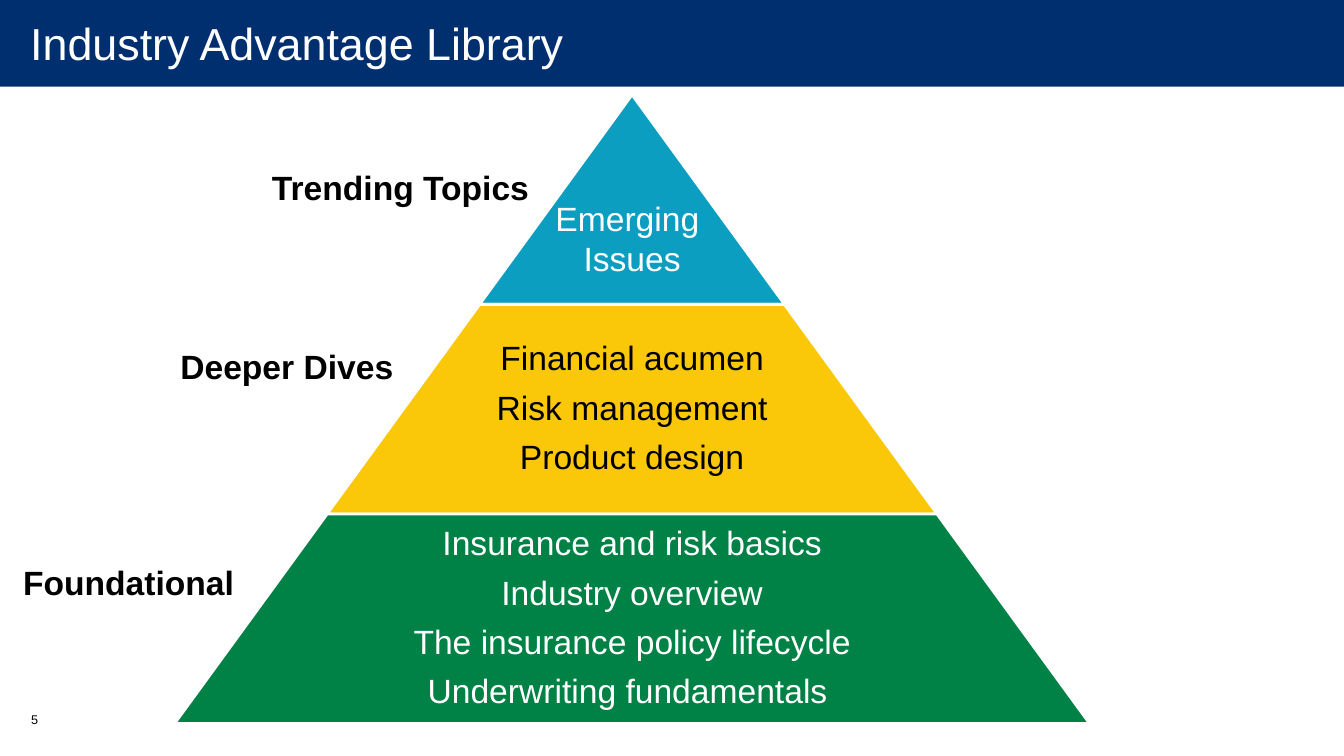
from pptx import Presentation
from pptx.dml.color import RGBColor
from pptx.enum.shapes import MSO_SHAPE
from pptx.enum.text import MSO_ANCHOR, PP_ALIGN
from pptx.util import Inches, Pt

RECT = MSO_SHAPE.RECTANGLE
TRAP = MSO_SHAPE.TRAPEZOID
TOP, MIDDLE = MSO_ANCHOR.TOP, MSO_ANCHOR.MIDDLE
LEFT, CENTER = PP_ALIGN.LEFT, PP_ALIGN.CENTER

WIDE, HIGH = 13.33, 7.5
COL, ROW = WIDE / 100, HIGH / 100

APEX, PEAK = 47.03, 12.53
STEP, RISE = 22.7, 27.73
SHARE = 0.65

TIERS = [
    ("0B9EC1", "FFFFFF", []),
    ("FAC809", "000000",
     ["Financial acumen", "Risk management", "Product design"]),
    ("008145", "FFFFFF",
     ["Insurance and risk basics", "Industry overview",
      "The insurance policy lifecycle", "Underwriting fundamentals "]),
]

LABELS = [
    ("Foundational", 0.98, 73.73, 17.4),
    ("Deeper Dives", 12.68, 45.07, 17.55),
    ("Trending Topics", 19.5, 21.47, 21.15),
]


def color(code):
    return RGBColor.from_string(code)


def place(col, row, cols, rows):
    return (Inches(col * COL), Inches(row * ROW),
            Inches(cols * COL), Inches(rows * ROW))


def add_block(slide, kind, box, fill):
    block = slide.shapes.add_shape(kind, *place(*box))
    block.shadow.inherit = False
    block.fill.solid()
    block.fill.fore_color.rgb = color(fill)
    block.line.fill.background()
    return block


def add_text(slide, box, lines, size=24, ink="000000", bold=False,
             align=LEFT, anchor=TOP, pads=(0.1, 0.05, 0.1, 0.05),
             wrap=True, pitch=1.0, after=0):
    frame = slide.shapes.add_textbox(*place(*box)).text_frame
    frame.word_wrap = wrap
    frame.vertical_anchor = anchor
    (frame.margin_left, frame.margin_top,
     frame.margin_right, frame.margin_bottom) = map(Inches, pads)
    frame.text = "\n".join(lines)
    for para in frame.paragraphs:
        para.alignment = align
        para.line_spacing = pitch
        para.space_after = Pt(after)
        for run in para.runs:
            run.font.name = "Arial"
            run.font.size = Pt(size)
            run.font.bold = bold
            run.font.color.rgb = color(ink)


def add_tier(slide, rank, fill, ink, lines):
    width = STEP * (rank + 1)
    top = PEAK + RISE * rank
    tier = add_block(slide, TRAP, (APEX - width / 2, top, width, RISE), fill)
    tier.adjustments[0] = 0.728
    tier.line.color.rgb = color("FFFFFF")
    tier.line.width = Pt(2)
    if lines:
        span = width * SHARE
        add_text(slide, (APEX - span / 2, top, span, RISE), lines, ink=ink,
                 align=CENTER, anchor=MIDDLE, pads=(0.03,) * 4,
                 pitch=0.9, after=9.4)


def main():
    deck = Presentation()
    deck.slide_width, deck.slide_height = Inches(WIDE), Inches(HIGH)
    slide = deck.slides.add_slide(deck.slide_layouts[6])

    add_block(slide, RECT, (0, 0, 100, 11.47), "002F70")
    add_text(slide, (0, 0, 100, 11.33), ["Industry Advantage Library"],
             size=32, ink="FFFFFF", anchor=MIDDLE, pads=(0.3, 0, 0.2, 0))

    for rank, (fill, ink, lines) in enumerate(TIERS):
        add_tier(slide, rank, fill, ink, lines)

    for label, col, row, cols in LABELS:
        add_text(slide, (col, row, cols, 6.67), [label], bold=True, wrap=False)

    add_text(slide, (APEX - STEP / 2, 25.47, STEP, 12.13),
             ["Emerging ", "Issues"], ink="FFFFFF", align=CENTER)
    add_text(slide, (1.58, 93.47, 3.68, 5.33), ["5"], size=9)

    deck.save("out.pptx")


if __name__ == "__main__":
    main()
